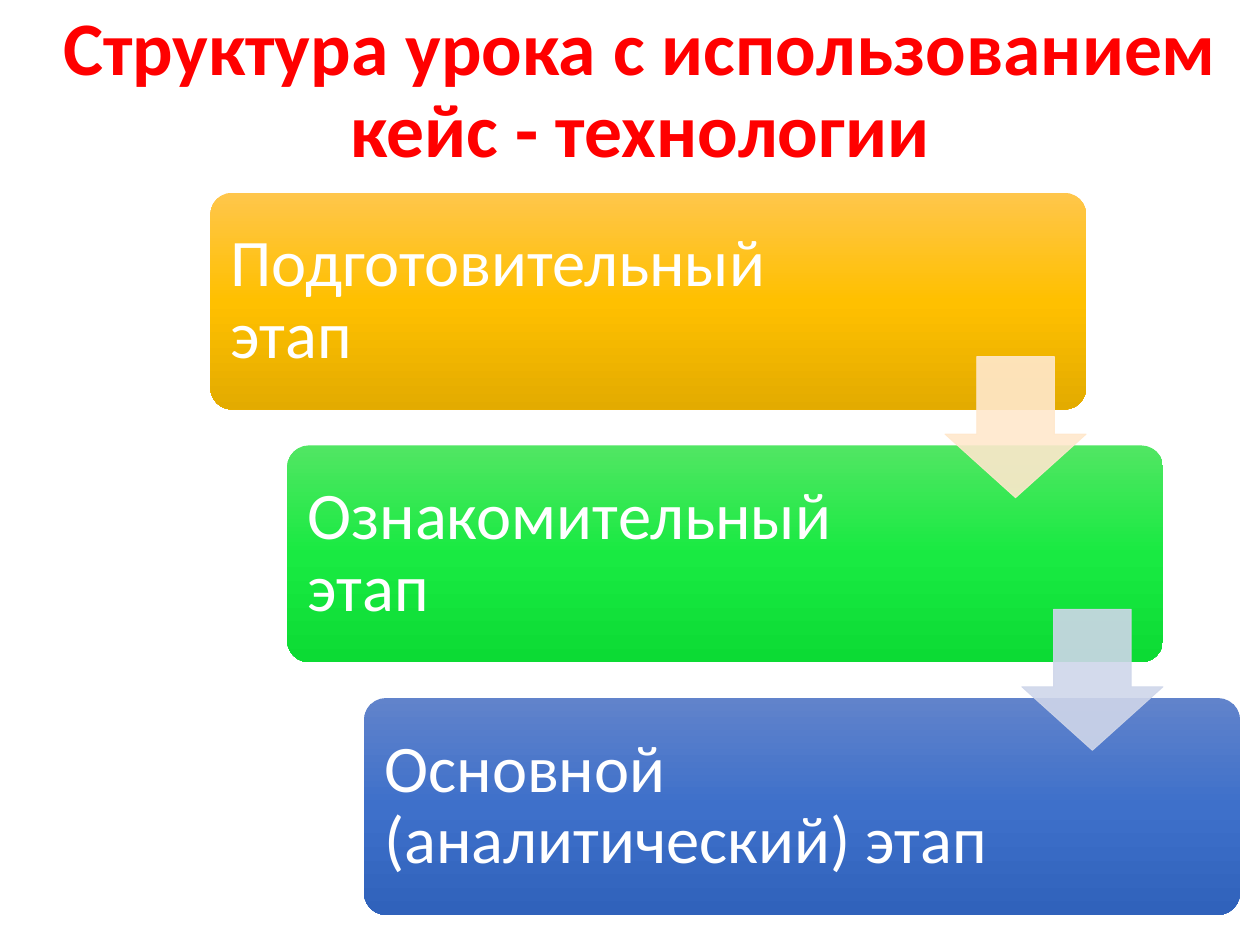
import copy

import pptx
import pptx.dml.color
import pptx.enum.shapes
import pptx.enum.text
import pptx.oxml.ns
import pptx.util
from lxml import etree

RGBColor = pptx.dml.color.RGBColor
Inches = pptx.util.Inches
Shapes = pptx.enum.shapes.MSO_SHAPE
Align = pptx.enum.text.PP_ALIGN
qn = pptx.oxml.ns.qn

RED = RGBColor(0xFF, 0x00, 0x00)
WHITE = RGBColor(0xFF, 0xFF, 0xFF)
GOLD = [RGBColor(0xFF, 0xC6, 0x4B), RGBColor(0xFF, 0xC0, 0x00), RGBColor(0xE3, 0xAB, 0x00)]
GREEN = [RGBColor(0x51, 0xE6, 0x63), RGBColor(0x19, 0xEA, 0x42), RGBColor(0x0C, 0xDB, 0x34)]
BLUE = [RGBColor(0x61, 0x83, 0xCB), RGBColor(0x3E, 0x70, 0xCA), RGBColor(0x30, 0x62, 0xBB)]
PEACH = RGBColor(0xFF, 0xE8, 0xCC)
LAVENDER = RGBColor(0xCF, 0xD6, 0xEA)

TITLE = "Структура урока с использованием кейс - технологии"
STAGES = [
    ("Подготовительный этап", GOLD, 5.19),
    ("Ознакомительный этап", GREEN, 5.22),
    ("Основной (аналитический) этап", BLUE, 5.22),
]
ARROW_COLORS = [PEACH, LAVENDER]

FIRST_LEFT, FIRST_TOP = 1.67, 1.53
STEP_X, STEP_Y = 0.61, 2.005
STAGE_WIDTH, STAGE_HEIGHT = 6.95, 1.72
ARROW_SIZE, ARROW_DROP = 1.12, 1.3


def stage_corner(index):
    return FIRST_LEFT + index * STEP_X, FIRST_TOP + index * STEP_Y


def add_shape(slide, kind, box, adjustments):
    shape = slide.shapes.add_shape(kind, *map(Inches, box))
    shape.shadow.inherit = False
    for index, value in enumerate(adjustments):
        shape.adjustments[index] = value
    return shape


def add_text(slide, box, text, size, color, margins, align, bold=False):
    frame = slide.shapes.add_textbox(*map(Inches, box)).text_frame
    frame.word_wrap = True
    frame.vertical_anchor = pptx.enum.text.MSO_ANCHOR.MIDDLE
    frame.margin_left = frame.margin_right = Inches(margins[0])
    frame.margin_top = frame.margin_bottom = Inches(margins[1])
    paragraph = frame.paragraphs[0]
    paragraph.alignment = align
    paragraph.line_spacing = 0.9
    run = paragraph.add_run()
    run.text = text
    run.font.name = "Calibri"
    run.font.size = pptx.util.Pt(size)
    run.font.bold = bold
    run.font.color.rgb = color


def fill_gradient(shape, colors):
    """Fill from top to bottom with evenly spaced colours."""
    shape.fill.gradient()
    shape.fill.gradient_angle = 270
    stop_list = shape.fill.gradient_stops[0]._gs.getparent()
    while len(stop_list) < len(colors):
        stop_list.append(copy.deepcopy(stop_list[0]))
    for index, (stop, color) in enumerate(zip(shape.fill.gradient_stops, colors)):
        stop.position = index / (len(colors) - 1)
        stop.color.rgb = color


def add_arrow(slide, box, color):
    arrow = add_shape(slide, Shapes.DOWN_ARROW, box, (0.55, 0.45))
    arrow.fill.solid()
    arrow.fill.fore_color.rgb = color
    arrow.line.color.rgb = color
    arrow.line.width = pptx.util.Pt(0.5)
    for element in arrow._element.spPr.iter(qn("a:srgbClr")):
        etree.SubElement(element, qn("a:alpha")).set("val", "90000")


def main():
    presentation = pptx.Presentation()
    presentation.slide_width = Inches(10)
    presentation.slide_height = Inches(7.5)
    slide = presentation.slides.add_slide(presentation.slide_layouts[6])

    add_text(slide, (0.16, 0, 9.84, 1.46), TITLE, 43.2, RED, (0.1, 0.05), Align.CENTER, bold=True)

    for index, (text, colors, text_width) in enumerate(STAGES):
        left, top = stage_corner(index)
        stage = add_shape(slide, Shapes.ROUNDED_RECTANGLE,
                          (left, top, STAGE_WIDTH, STAGE_HEIGHT), (0.1,))
        fill_gradient(stage, colors)
        stage.line.fill.background()
        add_text(slide, (left, top, text_width, STAGE_HEIGHT), text, 38, WHITE,
                 (0.16, 0.16), Align.LEFT)

    for index, color in enumerate(ARROW_COLORS):
        left, top = stage_corner(index)
        add_arrow(slide, (left + STAGE_WIDTH - ARROW_SIZE, top + ARROW_DROP,
                          ARROW_SIZE, ARROW_SIZE), color)

    presentation.save("out.pptx")


if __name__ == "__main__":
    main()
